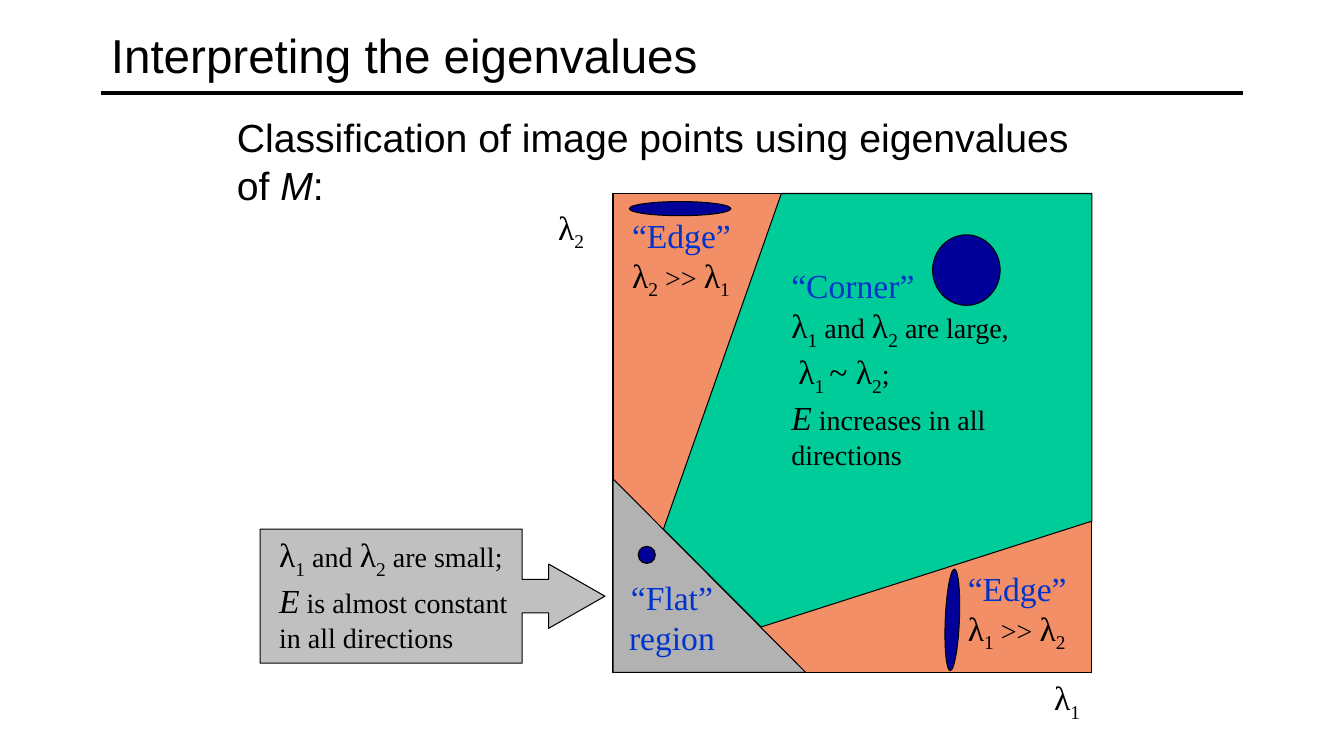
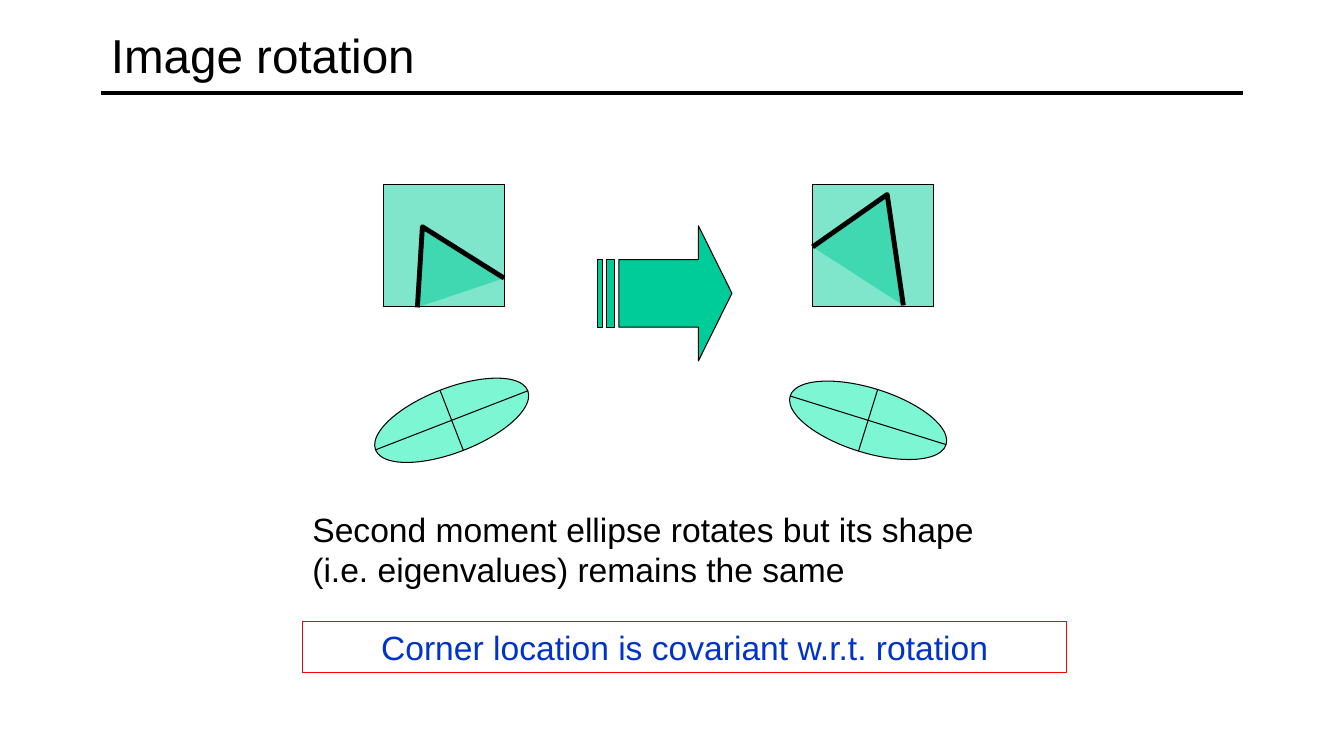
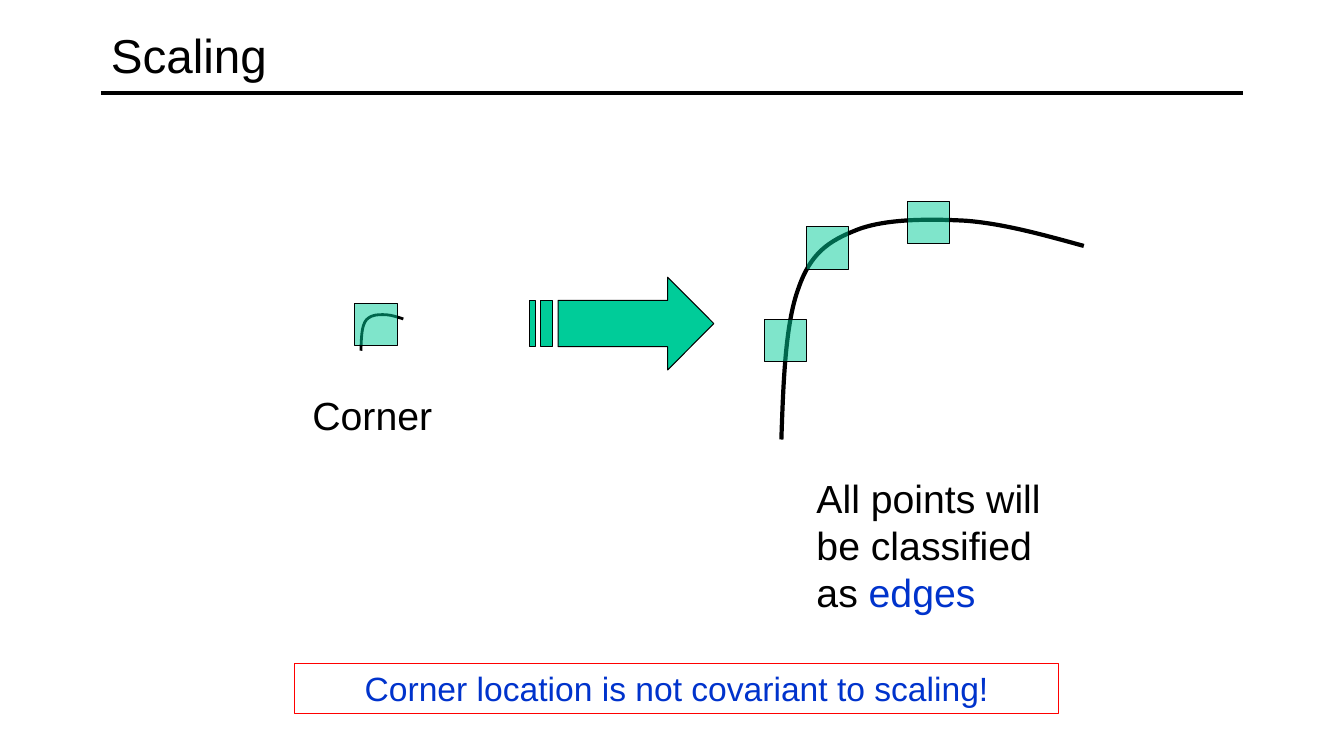
from dataclasses import dataclass
from math import cos, radians, sin

from lxml.etree import SubElement
from pptx import Presentation
from pptx.dml.color import RGBColor
from pptx.enum.shapes import MSO_CONNECTOR, MSO_SHAPE as SHAPE
from pptx.enum.text import MSO_ANCHOR as ANCHOR, MSO_AUTO_SIZE as FIT, PP_ALIGN as ALIGN
from pptx.oxml.ns import qn
from pptx.util import Inches, Pt


@dataclass(frozen=True)
class Theme:
    black: str = "000000"
    blue: str = "0033CC"
    navy: str = "000099"
    green: str = "00CC99"
    mint: str = "7CF6D3"
    orange: str = "F38F67"
    silver: str = "C0C0C0"
    gray: str = "B2B2B2"
    red: str = "FF0000"
    sans: str = "Arial"
    serif: str = "Times New Roman"
    title: int = 34
    large: int = 28
    body: int = 24
    small: int = 20
    hairline: float = 0.75
    rule: float = 3


T = Theme()


@dataclass(frozen=True)
class Run:
    text: str
    size: int = T.body
    color: str = T.black
    font: str = T.serif
    italic: bool = False
    sub: bool = False


def lam(index):
    return [Run("λ"), Run(str(index), sub=True)]


def note(text):
    return Run(text, T.small)


def add_runs(p, runs):
    """Add styled runs; a newline in a run becomes a line break."""
    for run in runs:
        for i, part in enumerate(run.text.split("\n")):
            if i:
                p.add_line_break()
            if not part:
                continue
            r = p.add_run()
            r.text = part
            r.font.size = Pt(run.size)
            r.font.name = run.font
            r.font.italic = run.italic
            r.font.color.rgb = RGBColor.from_string(run.color)
            if run.sub:
                r._r.get_or_add_rPr().set("baseline", "-25000")


def inches(*lengths):
    return [Inches(length) for length in lengths]


def fill_text(sp, runs, align):
    tf = sp.text_frame
    tf.word_wrap = True
    tf.auto_size = FIT.SHAPE_TO_FIT_TEXT
    tf.vertical_anchor = ANCHOR.TOP
    tf.paragraphs[0].alignment = align
    add_runs(tf.paragraphs[0], runs)


def add_text(s, x, y, w, h, runs, align=ALIGN.LEFT):
    fill_text(s.shapes.add_textbox(*inches(x, y, w, h)), runs, align)


def style(sp, fill=None, line=T.black, width=T.hairline, alpha=None):
    sp.shadow.inherit = False
    if fill:
        sp.fill.solid()
        sp.fill.fore_color.rgb = RGBColor.from_string(fill)
        if alpha:
            color = sp._element.spPr.find(qn("a:solidFill")).find(qn("a:srgbClr"))
            SubElement(color, qn("a:alpha")).set("val", str(alpha * 1000))
    else:
        sp.fill.background()
    sp.line.color.rgb = RGBColor.from_string(line)
    sp.line.width = Pt(width)
    return sp


def add_shape(s, kind, x, y, w, h, **look):
    return style(s.shapes.add_shape(kind, *inches(x, y, w, h)), **look)


def add_outline(s, x, y, contours, close=True, **look):
    """Draw contours of points in inches, relative to (x, y)."""
    builder = None
    for contour in contours:
        first, *rest = [inches(x + px, y + py) for px, py in contour]
        if builder is None:
            builder = s.shapes.build_freeform(*first)
        else:
            builder.move_to(*first)
        builder.add_line_segments(rest, close=close)
    return style(builder.convert_to_shape(), **look)


def add_curve(s, x, y, points, width):
    """Draw a start point and triples of points as cubic Bézier segments."""
    sp = add_outline(s, x, y, [points], close=False, width=width)
    segments = list(sp._element.iter(qn("a:lnTo")))
    outline = segments[0].getparent()
    for i in range(0, len(segments), 3):
        bezier = SubElement(outline, qn("a:cubicBezTo"))
        for segment in segments[i:i + 3]:
            bezier.append(segment[0])
            outline.remove(segment)


def add_line(s, x1, y1, x2, y2, width=T.hairline):
    line = s.shapes.add_connector(MSO_CONNECTOR.STRAIGHT, *inches(x1, y1, x2, y2))
    line.line.color.rgb = RGBColor.from_string(T.black)
    line.line.width = Pt(width)
    SubElement(line._element.spPr, qn("a:effectLst"))
    return line


def add_titled_slide(prs, title):
    s = prs.slides.add_slide(prs.slide_layouts[5])
    ph = s.shapes.title
    ph.left, ph.top, ph.width, ph.height = inches(1, 0.08, 11.33, 0.92)
    tf = ph.text_frame
    tf.auto_size = FIT.NONE
    tf.vertical_anchor = ANCHOR.MIDDLE
    tf.paragraphs[0].alignment = ALIGN.LEFT
    add_runs(tf.paragraphs[0], [Run(title, T.title, font=T.sans)])
    return s


def move_rule_to_layout(s):
    """Draw the title rule and hand it to the layout all slides share."""
    rule = add_line(s, 1, 0.92, 12.33, 0.92, T.rule)._element
    rule.nvCxnSpPr.cNvPr.set("id", "20")
    s.slide_layout.shapes.element.append(rule)


def add_conclusion(s, x, y, text):
    box = add_shape(s, SHAPE.RECTANGLE, x, y, 7.58, 0.5, line=T.red)
    fill_text(box, [Run(text, color=T.blue, font=T.sans)], ALIGN.CENTER)


def add_striped_arrow(s, x, y, w, h):
    """Arrow with two tail stripes, all scaled to the box."""
    def bar(left, right):
        return [(left, 0.25), (left, 0.75), (right, 0.75), (right, 0.25)]

    head = [(0.75, 0), (0.75, 0.25), (5 / 32, 0.25), (5 / 32, 0.75),
            (0.75, 0.75), (0.75, 1), (1, 0.5)]
    contours = [[(px * w, py * h) for px, py in contour]
                for contour in (head, bar(1 / 16, 1 / 8), bar(0, 1 / 32))]
    add_outline(s, x, y, contours, fill=T.green)


def add_edge_label(s, x, y, larger, smaller):
    add_text(s, x, y, 1.42, 0.91, [Run("“Edge” \n", color=T.blue),
                                   *lam(larger), note(" >> "), *lam(smaller)])


def add_eigenvalue_plane(s, x, y, side):
    add_shape(s, SHAPE.RECTANGLE, x, y, side, side, fill=T.orange)
    add_text(s, x + 4.09, y + side, 0.83, 0.5, lam(1), ALIGN.CENTER)
    add_text(s, x - 1, y + 0.08, 1.17, 0.5, lam(2), ALIGN.CENTER)
    corner = [(0.5, 3.33), (1.67, 0), (side, 0), (side, 3.25), (1.47, 4.3)]
    add_outline(s, x, y, [corner], fill=T.green)
    add_shape(s, SHAPE.RIGHT_TRIANGLE, x, y + 2.83, 1.91, 1.92, fill=T.gray)

    add_text(s, x + 1.67, y + 0.66, 2.92, 2.05, [
        Run("“Corner”\n", color=T.blue),
        *lam(1), note(" and "), *lam(2), note(" are large,\n "),
        *lam("1 "), Run("~ "), *lam(2), note(";\n"),
        Run("E", italic=True), note(" increases in all directions")])
    add_edge_label(s, x + 3.42, y + 3.66, 1, 2)
    add_edge_label(s, x + 0.09, y + 0.16, 2, 1)
    add_text(s, x - 0.08, y + 3.75, 1.33, 0.91,
             [Run("“Flat” region", color=T.blue)], ALIGN.CENTER)

    for dx, dy, w, h, angle in [(3.17, 0.41, 0.67, 0.7, 0), (0.16, 0.08, 1.01, 0.14, 0),
                                (0.25, 3.5, 0.17, 0.17, 0), (2.86, 4.16, 1.01, 0.14, 92.4)]:
        ellipse = add_shape(s, SHAPE.OVAL, x + dx, y + dy, w, h, fill=T.navy)
        ellipse.rotation = angle


def add_flat_callout(s, x, y):
    callout = add_shape(s, SHAPE.RIGHT_ARROW_CALLOUT, x, y, 3.42, 1.33, fill=T.silver)
    for i, value in enumerate((0.25, 0.24, 0.42, 0.76)):
        callout.adjustments[i] = value
    add_text(s, x + 0.09, y, 2.58, 1.25, [
        *lam(1), note(" and "), *lam(2), note(" are small;\n"),
        Run("E", italic=True), note(" is almost constant in all directions")])


def add_corner_window(s, x, y, corner):
    group = s.shapes.add_group_shape()
    add_shape(group, SHAPE.RECTANGLE, x, y, 1.2, 1.21, fill=T.green, alpha=50)
    add_outline(group, x, y, [corner], close=False, fill=T.green, alpha=50, width=3.5)


def add_moment_ellipse(s, cx, cy, angle):
    """Rotated ellipse with its two axes, centred on (cx, cy)."""
    group = s.shapes.add_group_shape()
    a, b = 0.81, 0.32
    ellipse = add_shape(group, SHAPE.OVAL, cx - a, cy - b, 2 * a, 2 * b, fill=T.mint)
    ellipse.rotation = angle
    for half, turn in ((a, angle), (b, angle + 90)):
        dx, dy = half * cos(radians(turn)), half * sin(radians(turn))
        add_line(group, cx - dx, cy - dy, cx + dx, cy + dy)


def add_scaled_corner(s, x, y, w, h, width, windows):
    """Rounded corner filling the box, with square windows offset from it."""
    group = s.shapes.add_group_shape()
    points = [(0, 2.19), (0.02, 1.61), (0.04, 1.04), (0.17, 0.69), (0.29, 0.34),
              (0.47, 0.22), (0.75, 0.11), (1.03, 0), (1.46, 0), (1.83, 0.02),
              (2.21, 0.05), (2.6, 0.16), (3, 0.27)]
    add_curve(group, x, y, [(px * w / 3, py * h / 2.19) for px, py in points], width)
    for dx, dy in windows:
        add_shape(group, SHAPE.RECTANGLE, x + dx, y + dy, 0.42, 0.42,
                  fill=T.green, alpha=50)


def eigenvalues_slide(prs):
    s = add_titled_slide(prs, "Interpreting the eigenvalues")
    move_rule_to_layout(s)
    add_flat_callout(s, 2.58, 5.25)
    add_eigenvalue_plane(s, 6.08, 1.92, 4.75)
    add_text(s, 2.25, 1.08, 8.75, 1.03, [
        Run("Classification of image points using eigenvalues of ", T.large, font=T.sans),
        Run("M", T.large, font=T.sans, italic=True),
        Run(":", T.large, font=T.sans)])


def rotation_slide(prs):
    s = add_titled_slide(prs, "Image rotation")
    add_text(s, 3, 5, 7.33, 0.91, [Run(
        "Second moment ellipse rotates but its shape (i.e. eigenvalues) remains the same",
        font=T.sans)])
    add_corner_window(s, 3.8, 1.83, [(0.34, 1.22), (0.39, 0.42), (1.2, 0.93)])
    add_corner_window(s, 8.06, 1.83, [(0, 0.62), (0.74, 0.1), (0.9, 1.2)])
    add_striped_arrow(s, 5.93, 2.24, 1.33, 1.34)
    add_moment_ellipse(s, 4.48, 4.17, -21.2)
    add_moment_ellipse(s, 8.61, 4.17, 17.3)
    add_conclusion(s, 3, 6.17, "Corner location is covariant w.r.t. rotation")


def scaling_slide(prs):
    s = add_titled_slide(prs, "Scaling")
    add_text(s, 8, 4.66, 2.83, 1.5, [
        Run("All points will be classified as ", T.large, font=T.sans),
        Run("edges", T.large, T.blue, T.sans)])
    add_scaled_corner(s, 3.58, 3.12, 0.42, 0.36, 2, [(-0.06, -0.11)])
    add_text(s, 3, 3.83, 1.75, 0.57, [Run("Corner", T.large, font=T.sans)])
    add_conclusion(s, 2.92, 6.58, "Corner location is not covariant to scaling!")
    add_scaled_corner(s, 7.75, 2.17, 3, 2.19, 3,
                      [(1.25, -0.17), (0.25, 0.08), (-0.17, 1)])
    add_striped_arrow(s, 5.25, 2.75, 1.83, 0.92)


def main():
    prs = Presentation()
    prs.slide_width, prs.slide_height = inches(13.33, 7.5)
    eigenvalues_slide(prs)
    rotation_slide(prs)
    scaling_slide(prs)
    prs.save("out.pptx")


if __name__ == "__main__":
    main()
